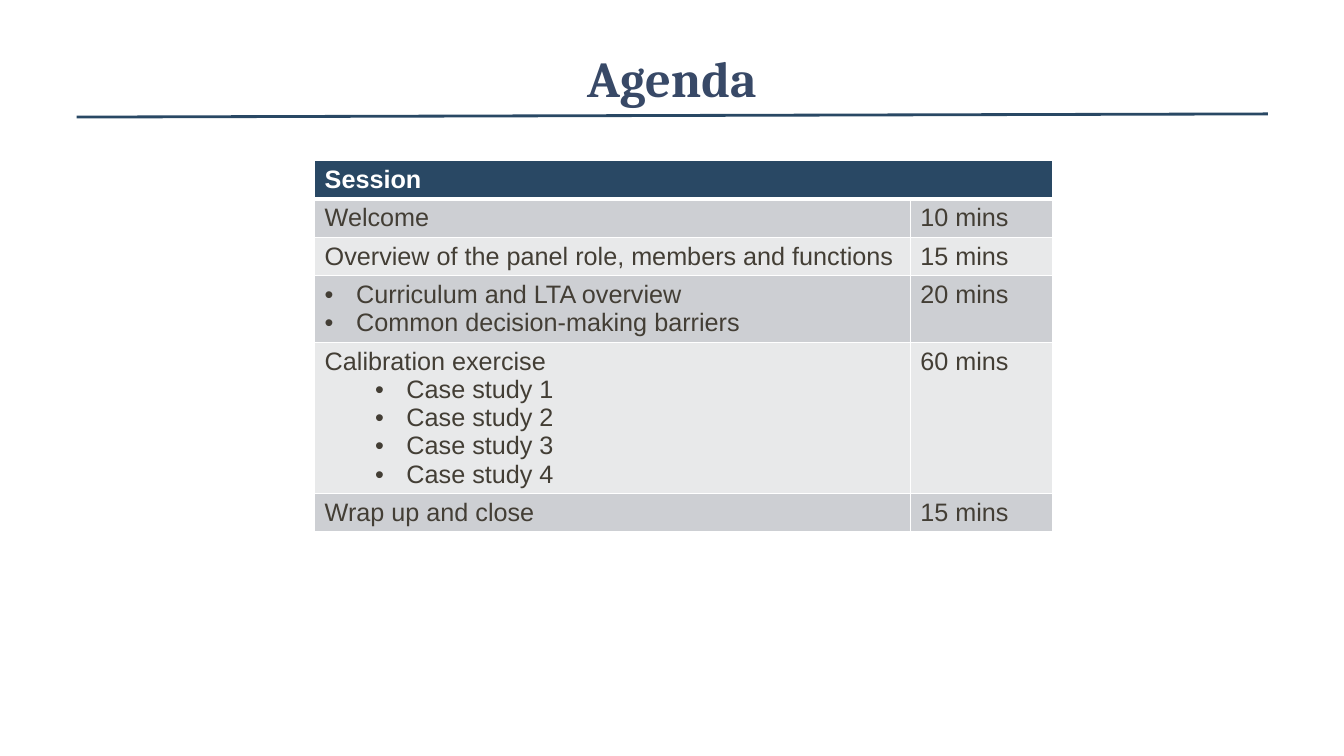
import lxml.etree
import pptx
import pptx.dml.color
import pptx.enum.shapes
import pptx.enum.text
import pptx.oxml.ns
import pptx.util

Cm = pptx.util.Cm
Pt = pptx.util.Pt
qn = pptx.oxml.ns.qn

COLORS = {
    "navy": "294864",
    "title": "384967",
    "text": "433E35",
    "dark_band": "CDCFD3",
    "light_band": "E8E9EA",
    "white": "FFFFFF",
}
BULLET_INDENT = Cm(0.79)
LEVEL_INDENT = Cm(1.27)
LINE_HEIGHT = 0.71
CELL_PADDING = 0.25

SESSIONS = [
    ([("Welcome", None)], "10 mins"),
    ([("Overview of the panel role, members and functions", None)], "15 mins"),
    ([("Curriculum and LTA overview", 0),
      ("Common decision-making barriers", 0)], "20 mins"),
    ([("Calibration exercise", None)]
     + [(f"Case study {number}", 1) for number in range(1, 5)], "60 mins"),
    ([("Wrap up and close", None)], "15 mins"),
]


class AgendaSlide:
    def __init__(self, presentation):
        self.heading_font = "Cambria"
        self.body_font = "Arial"
        self.slide = presentation.slides.add_slide(presentation.slide_layouts[5])

    def color(self, name):
        return pptx.dml.color.RGBColor.from_string(COLORS[name])

    def add_words(self, paragraph, words, font, size, color, bold=False):
        run = paragraph.add_run()
        run.text = words
        run.font.name = font
        run.font.size = Pt(size)
        run.font.bold = bold
        run.font.color.rgb = self.color(color)

    def title(self, words, left, top, width, height):
        heading = self.slide.shapes.title
        heading.left, heading.top = Cm(left), Cm(top)
        heading.width, heading.height = Cm(width), Cm(height)
        frame = heading.text_frame
        frame.word_wrap = True
        frame.auto_size = pptx.enum.text.MSO_AUTO_SIZE.NONE
        frame.vertical_anchor = pptx.enum.text.MSO_ANCHOR.MIDDLE
        paragraph = frame.paragraphs[0]
        paragraph.alignment = pptx.enum.text.PP_ALIGN.CENTER
        self.add_words(paragraph, words, self.heading_font, 36, "title", True)

    def rule(self, x1, y1, x2, y2):
        underline = self.slide.shapes.add_connector(
            pptx.enum.shapes.MSO_CONNECTOR.STRAIGHT, Cm(x1), Cm(y1), Cm(x2), Cm(y2))
        underline.line.color.rgb = self.color("navy")
        underline.line.width = Pt(2)
        lxml.etree.SubElement(underline._element.spPr, qn("a:effectLst"))

    def bullet(self, paragraph, level):
        paragraph.level = level
        properties = paragraph._p.get_or_add_pPr()
        properties.set("marL", str(BULLET_INDENT + level * LEVEL_INDENT))
        properties.set("indent", str(-BULLET_INDENT))
        lxml.etree.SubElement(properties, qn("a:buFont"), typeface=self.body_font)
        lxml.etree.SubElement(properties, qn("a:buChar"), char="•")

    def style_cell(self, cell, fill, top=1, bottom=1):
        properties = cell._tc.get_or_add_tcPr()
        for side, points in (("L", 1), ("R", 1), ("T", top), ("B", bottom)):
            border = lxml.etree.SubElement(properties, qn(f"a:ln{side}"), w=str(Pt(points)))
            solid = lxml.etree.SubElement(border, qn("a:solidFill"))
            lxml.etree.SubElement(solid, qn("a:srgbClr"), val=COLORS["white"])
        cell.fill.solid()
        cell.fill.fore_color.rgb = self.color(fill)

    def fill_cell(self, cell, lines, color="text", bold=False):
        frame = cell.text_frame
        for index, (words, level) in enumerate(lines):
            paragraph = frame.add_paragraph() if index else frame.paragraphs[0]
            if level is not None:
                self.bullet(paragraph, level)
            self.add_words(paragraph, words, self.body_font, 18, color, bold)

    def agenda(self, header, sessions, left, top, widths):
        line_counts = [1] + [len(topics) for topics, _ in sessions]
        heights = [Cm(count * LINE_HEIGHT + CELL_PADDING) for count in line_counts]
        table = self.slide.shapes.add_table(
            len(heights), len(widths), Cm(left), Cm(top), Cm(sum(widths)), sum(heights)).table
        for column, width in zip(table.columns, widths):
            column.width = Cm(width)
        for row, height in zip(table.rows, heights):
            row.height = height

        for cell in table.rows[0].cells:
            self.style_cell(cell, "navy", bottom=3)
        table.cell(0, 0).merge(table.cell(0, 1))
        self.fill_cell(table.cell(0, 0), [(header, None)], "white", True)

        for index, (topics, duration) in enumerate(sessions, 1):
            band = "dark_band" if index % 2 else "light_band"
            for cell, lines in zip(table.rows[index].cells, (topics, [(duration, None)])):
                self.style_cell(cell, band, top=3 if index == 1 else 1)
                self.fill_cell(cell, lines)


def main():
    presentation = pptx.Presentation()
    presentation.slide_width = Cm(33.87)
    presentation.slide_height = Cm(19.05)
    slide = AgendaSlide(presentation)
    slide.agenda("Session", SESSIONS, 7.93, 4.05, (15.01, 3.58))
    slide.rule(1.93, 2.95, 31.95, 2.87)
    slide.title("Agenda", 2.39, 0.94, 29.08, 2.01)
    presentation.save("out.pptx")


if __name__ == "__main__":
    main()
